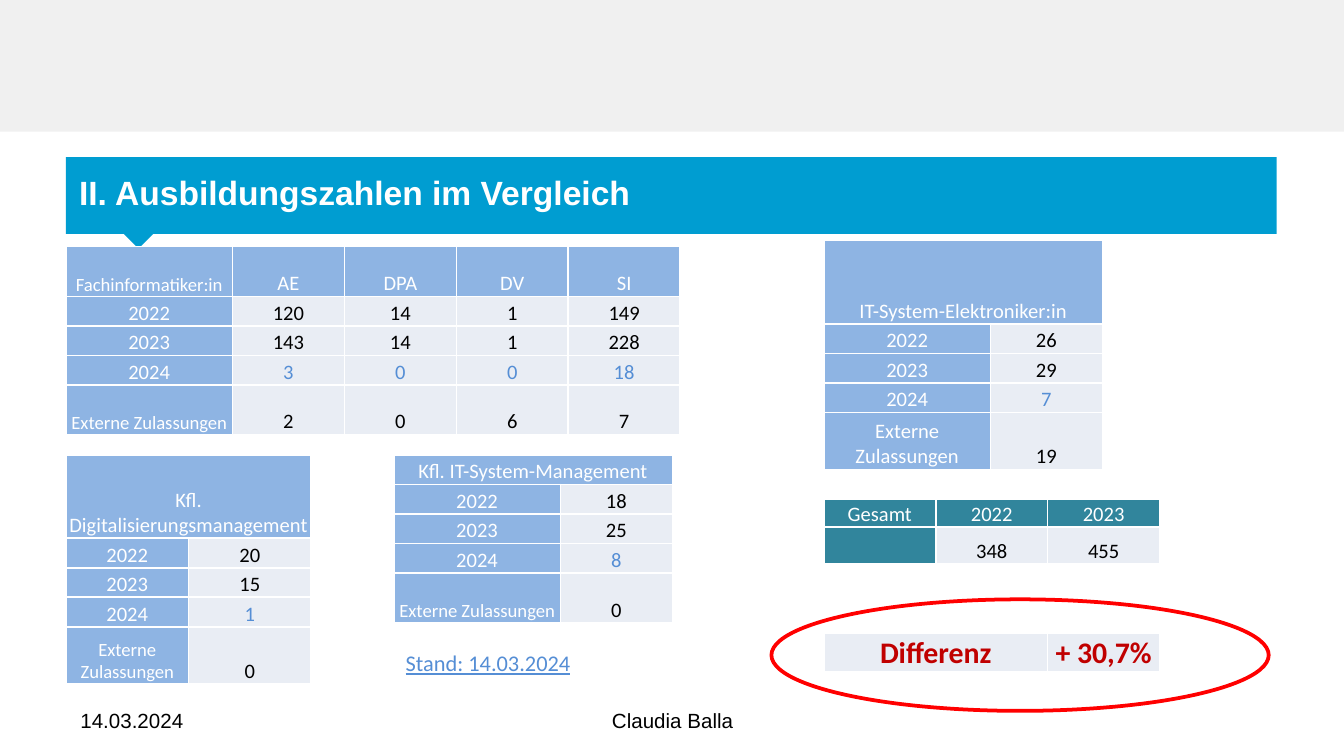
from lxml import etree
from pptx import Presentation
from pptx import util as u
from pptx.dml.color import RGBColor
from pptx.enum import shapes, text
from pptx.oxml import ns

UNIT = u.Inches(0.1)  # grid step: the page is 100 columns by 56.25 rows
PAGE_COLUMNS, PAGE_ROWS = 100, 56.25
LEFT, MIDDLE, RIGHT = 4.9, 29.3, 61.3  # left edges of the three blocks
LABEL, VALUE, LINE = 12.4, 8.33, 2.2  # column widths and row height

WHITE = RGBColor(0xFF, 0xFF, 0xFF)
BLACK = RGBColor(0x00, 0x00, 0x00)
BAND = RGBColor(0xF0, 0xF0, 0xF0)
TITLE_BLUE = RGBColor(0x00, 0x9D, 0xD1)
HEADER_BLUE = RGBColor(0x8E, 0xB4, 0xE3)
CURRENT_BLUE = RGBColor(0x55, 0x8E, 0xD5)
PALE = RGBColor(0xE9, 0xED, 0xF4)
TEAL = RGBColor(0x31, 0x85, 0x9C)
DARK_RED = RGBColor(0xC0, 0x00, 0x00)
RED = RGBColor(0xFF, 0x00, 0x00)

YEARS = ["2022", "2023", "2024"]
EXTERNAL = "Externe Zulassungen"


def grid(*lengths):
    return [round(length * UNIT) for length in lengths]


def write(para, words, size, color, font="Calibri", bold=False, align=None):
    para.text = words
    para.alignment = align
    for span in para.runs:
        span.font.name, span.font.size = font, u.Pt(size)
        span.font.color.rgb, span.font.bold = color, bold


def add_filled(page, preset, box, color):
    shape = page.shapes.add_shape(preset, *grid(*box))
    shape.shadow.inherit = False
    shape.fill.solid()
    shape.fill.fore_color.rgb = color
    shape.line.fill.background()
    return shape


def add_label(page, box, words, size, color, anchor=text.MSO_ANCHOR.MIDDLE, **style):
    frame = page.shapes.add_textbox(*grid(*box)).text_frame
    frame.word_wrap = True
    frame.vertical_anchor = anchor
    write(frame.paragraphs[0], words, size, color, **style)
    return frame.paragraphs[0]


def add_borders(cell):
    properties = cell._tc.get_or_add_tcPr()
    for index, side in enumerate(("a:lnL", "a:lnR", "a:lnT", "a:lnB")):
        line = etree.Element(ns.qn(side), w=str(u.Pt(1)))
        fill = etree.SubElement(line, ns.qn("a:solidFill"))
        etree.SubElement(fill, ns.qn("a:srgbClr"), val=str(WHITE))
        properties.insert(index, line)


def fill_cell(cell, words, fill, color, size=11, bold=False):
    cell.fill.solid()
    cell.fill.fore_color.rgb = fill
    cell.margin_left = cell.margin_right = cell.margin_top = u.Inches(0.01)
    cell.margin_bottom = 0
    cell.vertical_anchor = text.MSO_ANCHOR.BOTTOM
    para = cell.text_frame.paragraphs[0]
    write(para, words, size, color, bold=bold, align=text.PP_ALIGN.CENTER)
    if not words:
        etree.SubElement(para._p, ns.qn("a:endParaRPr"), sz=str(size * 100))
    add_borders(cell)


def add_grid_table(page, left, top, widths, heights):
    box = grid(left, top, sum(widths), sum(heights))
    table = page.shapes.add_table(len(heights), len(widths), *box).table
    table.first_row = table.horz_banding = False
    for column, width in zip(table.columns, grid(*widths)):
        column.width = width
    for row, height in zip(table.rows, grid(*heights)):
        row.height = height
    return table


def add_job_table(page, left, top, widths, heights, header, values,
                  header_size=11, external_size=10):
    """Trainee numbers of one job: years and external admissions down the side."""
    table = add_grid_table(page, left, top, widths, heights)
    for column in range(len(widths)):
        words = header[column] if column < len(header) else ""
        size = header_size if column == 0 else 11
        fill_cell(table.cell(0, column), words, HEADER_BLUE, WHITE, size)
    if len(header) == 1:
        table.cell(0, 0).merge(table.cell(0, len(widths) - 1))
    for row, (label, numbers) in enumerate(zip(YEARS + [EXTERNAL], values), 1):
        size = external_size if label == EXTERNAL else 11
        color = CURRENT_BLUE if label == "2024" else BLACK
        fill_cell(table.cell(row, 0), label, HEADER_BLUE, WHITE, size)
        for column, number in enumerate(numbers, 1):
            fill_cell(table.cell(row, column), str(number), PALE, color)


def add_total_table(page, left, top):
    table = add_grid_table(page, left, top, [VALUE] * 3, [2.05, 2.75, 5.2, 2.8])
    for column, words in enumerate(["Gesamt", "2022", "2023"]):
        fill_cell(table.cell(0, column), words, TEAL, WHITE)
    for column, words in enumerate(["", "348", "455"]):
        fill_cell(table.cell(1, column), words, PALE if words else TEAL, BLACK)
    for column, words in enumerate(["Differenz", "", "+ 30,7%"]):
        fill_cell(table.cell(2, column), "", WHITE, BLACK)
        fill_cell(table.cell(3, column), words, PALE, DARK_RED, 16, True)
    table.cell(3, 0).merge(table.cell(3, 1))


def add_header(page, left, top, width, height):
    add_filled(page, shapes.MSO_SHAPE.RECTANGLE, (0, 0, PAGE_COLUMNS, 9.8), BAND)
    pointer = add_filled(page, shapes.MSO_SHAPE.ISOSCELES_TRIANGLE,
                         (left + 4.2, top + height - 0.1, 2.4, 1.2), TITLE_BLUE)
    pointer.rotation = 180
    bar = add_filled(page, shapes.MSO_SHAPE.RECTANGLE, (left, top, width, height), TITLE_BLUE)
    frame = bar.text_frame
    frame.vertical_anchor = text.MSO_ANCHOR.TOP
    para = frame.paragraphs[0]
    write(para, "II. Ausbildungszahlen im Vergleich", 18, WHITE, "Arial", True,
          text.PP_ALIGN.LEFT)
    para.line_spacing = 1.2


def add_footer(page, top, height):
    add_label(page, (34.2, top, 31.7, height), "Claudia Balla", 11, BLACK,
              font="Arial", align=text.PP_ALIGN.CENTER)
    add_label(page, (5, top, 23.3, height), "14.03.2024", 11, BLACK, font="Arial")


def add_highlight(page, box):
    ring = page.shapes.add_shape(shapes.MSO_SHAPE.OVAL, *grid(*box))
    ring.shadow.inherit = False
    ring.fill.background()
    ring.line.color.rgb = RED
    ring.line.width = u.Pt(2)


def main():
    deck = Presentation()
    deck.slide_width, deck.slide_height = grid(PAGE_COLUMNS, PAGE_ROWS)
    page = deck.slides.add_slide(deck.slide_layouts[6])
    years = [LINE] * 3
    tall = [6.2, *years, 4.25]

    add_header(page, LEFT, 11.7, 90.1, 5.7)
    add_total_table(page, RIGHT, 37.15)
    add_job_table(page, RIGHT, 17.9, [LABEL, VALUE], tall,
                  ["IT-System-Elektroniker:in"], [[26], [29], [7], [19]],
                  external_size=11)
    add_job_table(page, LEFT, 18.35, [LABEL] + [VALUE] * 4, [3.7, *years, 3.7],
                  ["Fachinformatiker:in", "AE", "DPA", "DV", "SI"],
                  [[120, 14, 1, 149], [143, 14, 1, 228], [3, 0, 0, 18], [2, 0, 6, 7]],
                  header_size=10)
    add_job_table(page, LEFT, 33.85, [9.13] * 2, tall,
                  ["Kfl. Digitalisierungsmanagement"], [[20], [15], [1], [0]])
    add_job_table(page, MIDDLE, 33.85, [LABEL, VALUE], [LINE, *years, 3.7],
                  ["Kfl. IT-System-Management"], [[18], [25], [8], [0]])
    status = add_label(page, (MIDDLE - 0.1, 47.8, 22.4, 3), "Stand: 14.03.2024", 12,
                       CURRENT_BLUE, anchor=text.MSO_ANCHOR.TOP)
    status.runs[0].font.underline = True
    add_footer(page, 52.1, 3)
    add_highlight(page, (57.4, 44.6, 37, 8.3))
    deck.save("out.pptx")


if __name__ == "__main__":
    main()
